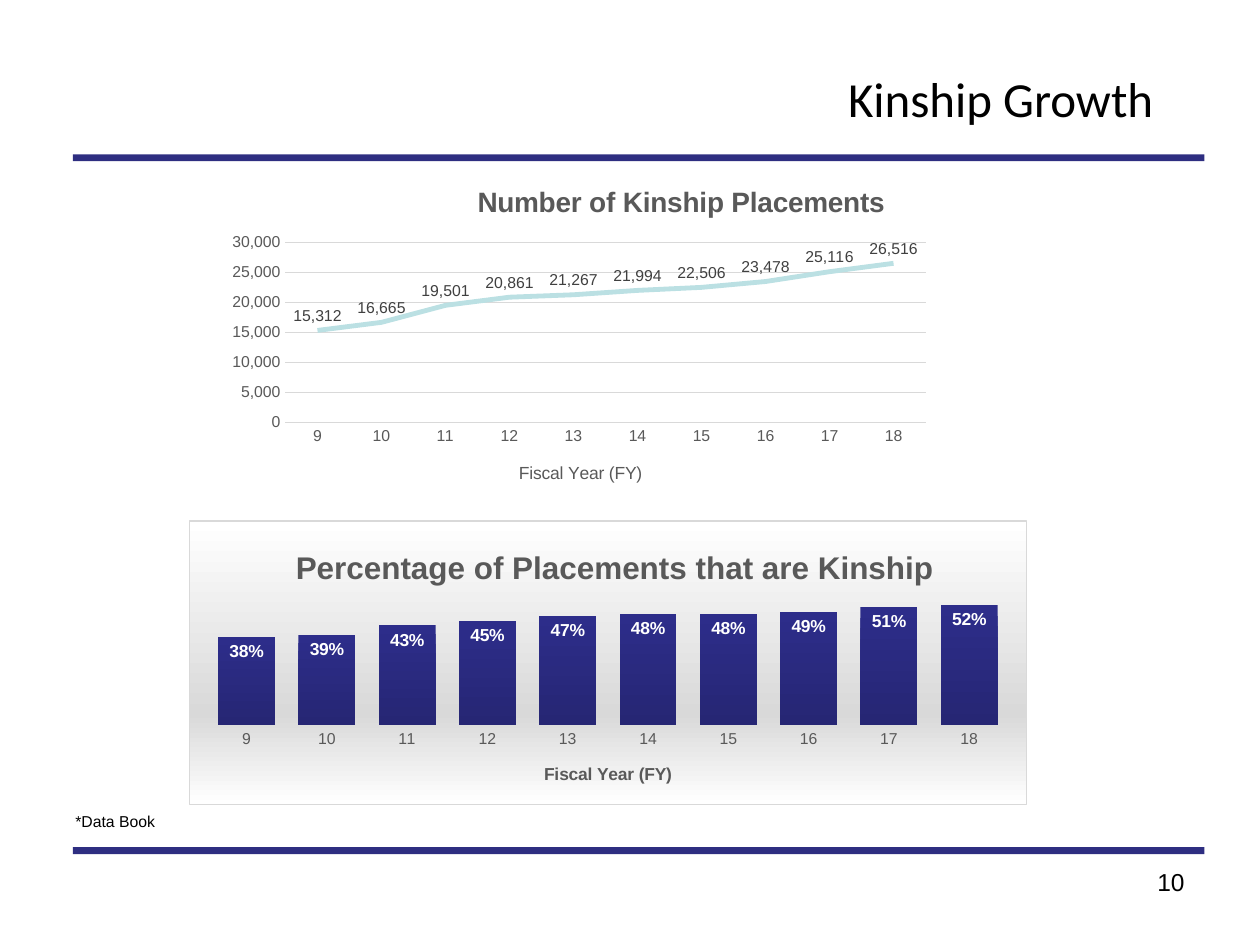
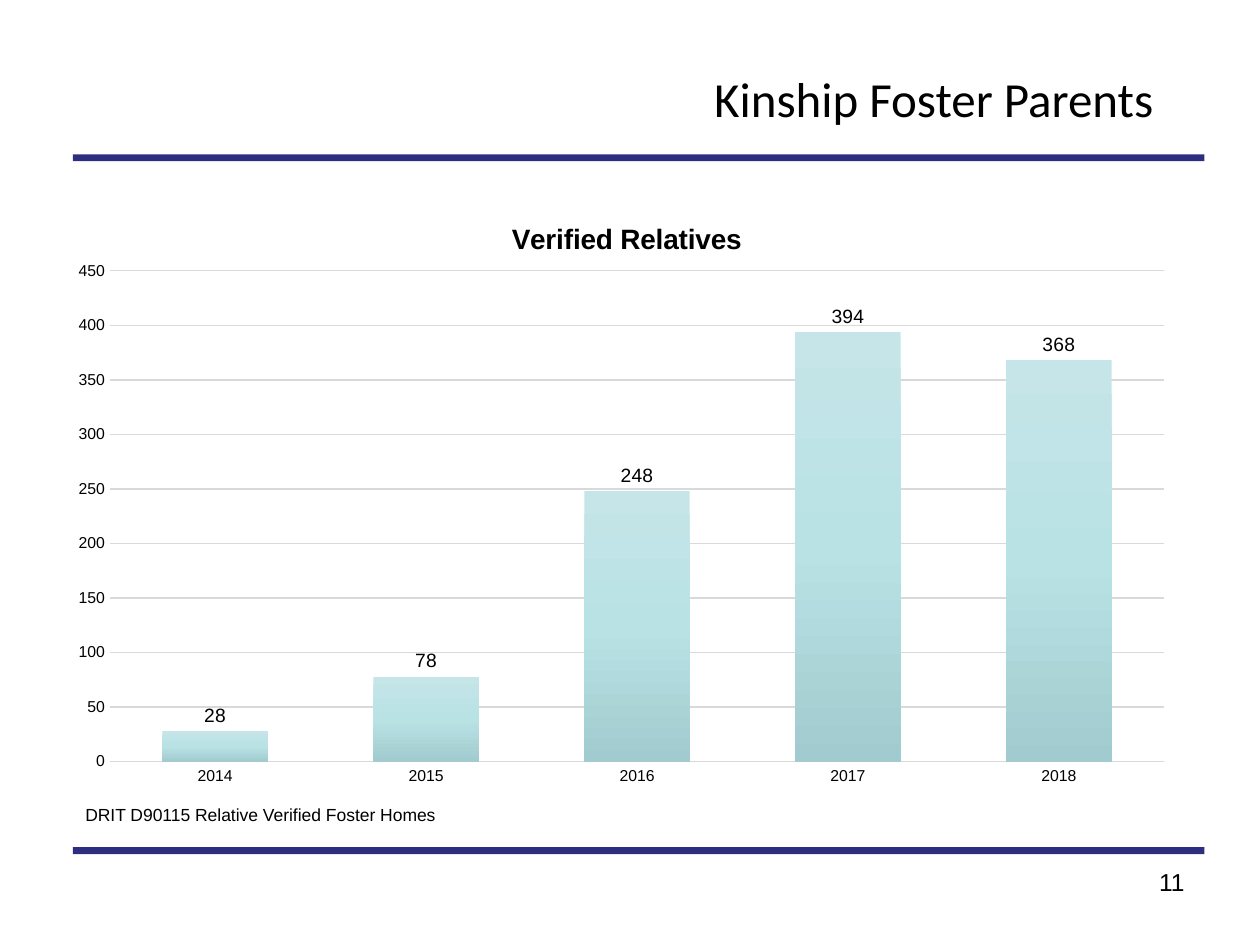
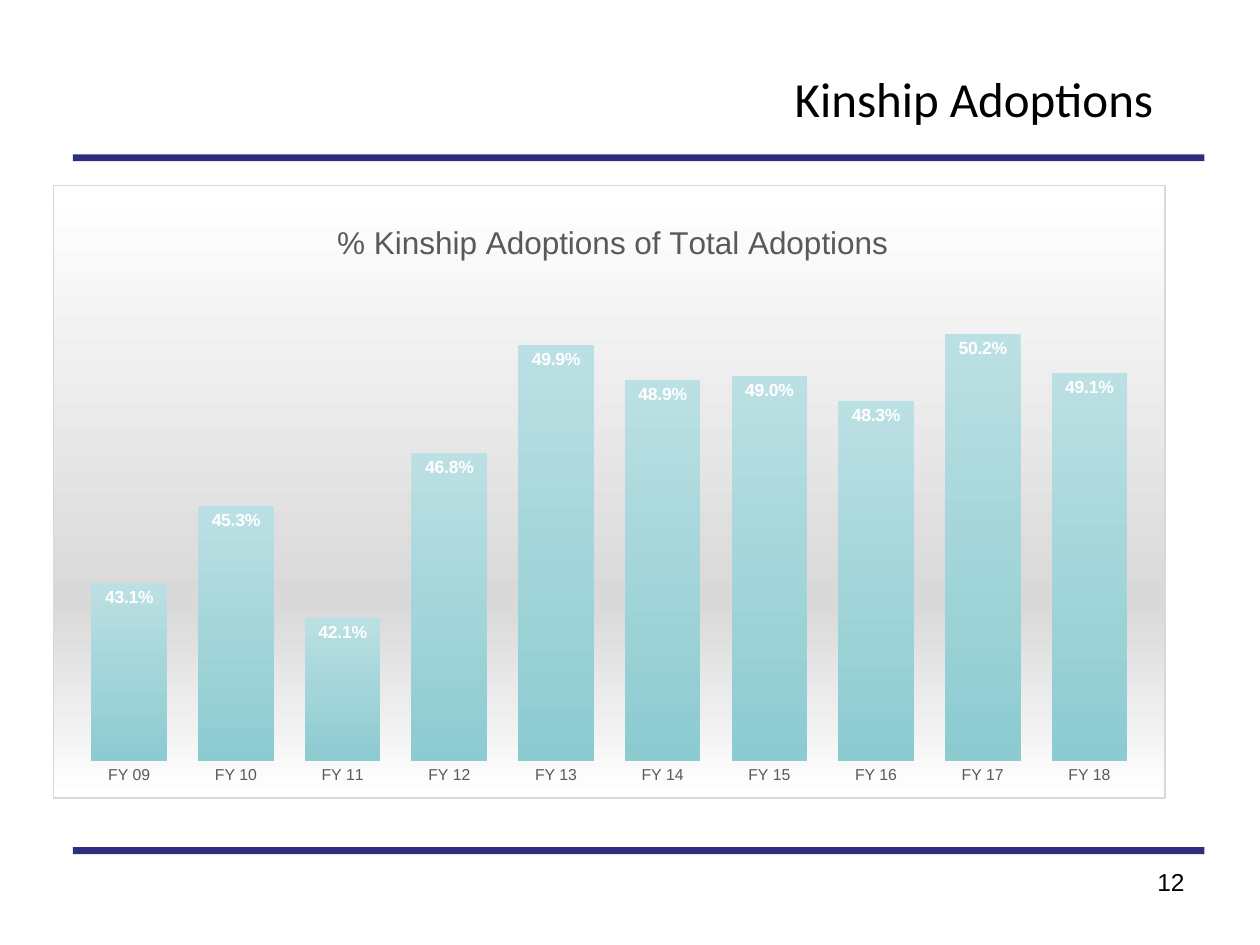
from dataclasses import dataclass

from pptx import Presentation
from pptx.chart.data import CategoryChartData
from pptx.dml.color import RGBColor
from pptx.enum.chart import XL_CHART_TYPE as ChartType
from pptx.enum.chart import XL_LABEL_POSITION as LabelPosition
from pptx.enum.chart import XL_TICK_MARK as TickMark
from pptx.enum.shapes import MSO_CONNECTOR as Connector
from pptx.enum.text import MSO_ANCHOR as Anchor
from pptx.enum.text import MSO_AUTO_SIZE as AutoSize
from pptx.enum.text import PP_ALIGN as Align
from pptx.oxml import parse_xml
from pptx.oxml.ns import nsdecls, qn
from pptx.util import Cm, Pt


@dataclass(frozen=True)
class Theme:
    title_font: str = "Calibri"
    body_font: str = "Arial"
    black: str = "000000"
    white: str = "FFFFFF"
    navy: str = "000066"
    grey: str = "595959"
    dark_grey: str = "404040"
    pale_grey: str = "D9D9D9"
    aqua: str = "BBE0E3"
    navy_bars: tuple = ((0, "2D2D8A"), (100, "262674"))
    pale_bars: tuple = ((0, "C5E5E8"), (50, "B9E2E5"), (100, "A1CBCE"))
    aqua_bars: tuple = ((0, "BBE0E3"), (100, "8CCBD0"))
    panel: tuple = ((0, "FFFFFF"), (68, "D9D9D9"), (100, "FFFFFF"))
    title_size: float = 28
    panel_title_size: float = 18
    chart_title_size: float = 16
    page_size: float = 14
    large_label_size: float = 11
    chart_size: float = 10
    axis_size: float = 9
    band_width: float = 4
    band_alpha: int = 82
    series_width: float = 2.75
    hairline: float = 0.75


def gradient(stops):
    marks = "".join(
        f'<a:gs pos="{position * 1000}"><a:srgbClr val="{color}"/></a:gs>'
        for position, color in stops
    )
    return (
        f'<a:gradFill {nsdecls("a")}><a:gsLst>{marks}</a:gsLst>'
        '<a:lin ang="5400000" scaled="0"/></a:gradFill>'
    )


def place(element, index, x, y, width=None, height=None):
    for layout in element.findall(qn("c:layout")):
        element.remove(layout)
    inner = width is not None
    target = '<c:layoutTarget val="inner"/>' if inner else ""
    size = f'<c:w val="{width}"/><c:h val="{height}"/>' if inner else ""
    layout = (
        f'<c:layout {nsdecls("c")}><c:manualLayout>{target}'
        '<c:xMode val="edge"/><c:yMode val="edge"/>'
        f'<c:x val="{x}"/><c:y val="{y}"/>{size}</c:manualLayout></c:layout>'
    )
    element.insert(index, parse_xml(layout))


class Deck:
    def __init__(self, theme):
        self.theme = theme
        self.presentation = Presentation()
        self.presentation.slide_width = Cm(25.4)
        self.presentation.slide_height = Cm(19.05)
        self.slide = None

    def style(self, font, size, color, bold=False, name=None):
        font.name = name or self.theme.body_font
        font.size = Pt(size)
        font.bold = bold
        font.color.rgb = RGBColor.from_string(color)

    def outline(self, line, color, width):
        line.color.rgb = RGBColor.from_string(color)
        line.width = Pt(width)

    def start(self, title, number):
        theme = self.theme
        self.slide = self.presentation.slides.add_slide(
            self.presentation.slide_layouts[5]
        )
        shape = self.slide.shapes.title
        shape.left, shape.top = Cm(6.35), Cm(0.76)
        shape.width, shape.height = Cm(17.15), Cm(2.41)
        frame = shape.text_frame
        frame.text = title
        frame.auto_size = AutoSize.NONE
        frame.vertical_anchor = Anchor.MIDDLE
        paragraph = frame.paragraphs[0]
        paragraph.alignment = Align.RIGHT
        self.style(paragraph.font, theme.title_size, theme.black, name=theme.title_font)
        for top in (3.18, 17.15):
            self.band(top)
        self.text(str(number), (18.21, 17.35, 5.92, 1.32), theme.page_size, Align.RIGHT)

    def band(self, top):
        theme = self.theme
        band = self.slide.shapes.add_connector(
            Connector.STRAIGHT, Cm(1.47), Cm(top), Cm(24.28), Cm(top)
        )
        self.outline(band.line, theme.navy, theme.band_width)
        properties = band.element.spPr
        color = properties.find(".//" + qn("a:srgbClr"))
        color.append(
            parse_xml(f'<a:alpha {nsdecls("a")} val="{theme.band_alpha * 1000}"/>')
        )
        properties.append(parse_xml(f'<a:effectLst {nsdecls("a")}/>'))

    def text(self, words, box, size, alignment=Align.LEFT):
        frame = self.slide.shapes.add_textbox(*map(Cm, box)).text_frame
        frame.word_wrap = True
        frame.text = words
        paragraph = frame.paragraphs[0]
        paragraph.alignment = alignment
        self.style(paragraph.font, size, self.theme.black)

    def chart_title(self, title, words, corner, size, color, bold):
        title.text_frame.text = words
        self.style(title.text_frame.paragraphs[0].font, size, color, bold)
        place(title.element, 1, *corner)

    def chart(self, kind, box, categories, values, plot_area, number_format, name):
        theme = self.theme
        data = CategoryChartData(number_format=number_format)
        data.categories = categories
        data.add_series(name, values)
        chart = self.slide.shapes.add_chart(kind, *map(Cm, box), data).chart
        chart.has_legend = False
        self.style(chart.font, theme.chart_size, theme.black)
        chart.plots[0].vary_by_categories = False
        place(chart.element.find(".//" + qn("c:plotArea")), 0, *plot_area)
        return chart

    def heading(self, chart, words, corner, size, color, bold=True):
        chart.has_title = True
        self.chart_title(chart.chart_title, words, corner, size, color, bold)

    def category_axis(self, chart, color, line_color=None, title_corner=None, bold=False):
        theme = self.theme
        axis = chart.category_axis
        axis.major_tick_mark = TickMark.NONE
        axis.has_major_gridlines = False
        self.style(axis.tick_labels.font, theme.axis_size, color)
        if line_color:
            self.outline(axis.format.line, line_color, theme.hairline)
        else:
            axis.format.line.fill.background()
        if title_corner:
            self.chart_title(
                axis.axis_title, "Fiscal Year (FY)", title_corner,
                theme.chart_size, color, bold,
            )

    def value_axis(self, chart, low, high, step=None, color=None):
        theme = self.theme
        axis = chart.value_axis
        axis.minimum_scale, axis.maximum_scale = low, high
        axis.has_major_gridlines = step is not None
        if step is None:
            axis.visible = False
            return
        axis.major_unit = step
        axis.major_tick_mark = TickMark.NONE
        axis.format.line.fill.background()
        self.outline(axis.major_gridlines.format.line, theme.pale_grey, theme.hairline)
        self.style(axis.tick_labels.font, theme.axis_size, color)

    def labels(self, chart, number_format, position, size, color, bold=False):
        plot = chart.plots[0]
        plot.has_data_labels = True
        labels = plot.data_labels
        labels.show_value = True
        labels.number_format = number_format
        labels.number_format_is_linked = False
        labels.position = position
        self.style(labels.font, size, color, bold)

    def bars(self, chart, stops, gap, overlap=0):
        plot = chart.plots[0]
        plot.gap_width, plot.overlap = gap, overlap
        series = plot.series[0]
        series.invert_if_negative = False
        series.format.fill.gradient()
        fill = chart.element.find(f'.//{qn("c:ser")}/{qn("c:spPr")}/{qn("a:gradFill")}')
        fill.getparent().replace(fill, parse_xml(gradient(stops)))

    def panel(self, chart):
        theme = self.theme
        properties = (
            f'<c:spPr {nsdecls("c", "a")}>{gradient(theme.panel)}'
            f'<a:ln w="{Pt(theme.hairline)}"><a:solidFill>'
            f'<a:srgbClr val="{theme.pale_grey}"/></a:solidFill></a:ln></c:spPr>'
        )
        chart.element.find(qn("c:chart")).addnext(parse_xml(properties))

    def share_chart(self, box, categories, values, plot_area, number_format, scale,
                    stops, name):
        theme = self.theme
        chart = self.chart(ChartType.COLUMN_CLUSTERED, box, categories, values,
                           plot_area, number_format, name)
        self.panel(chart)
        self.value_axis(chart, *scale)
        self.bars(chart, stops, 41)
        self.labels(chart, number_format, LabelPosition.INSIDE_END,
                    theme.chart_size, theme.white, True)
        return chart


def growth_slide(deck):
    theme = deck.theme
    deck.start("Kinship Growth", 10)
    deck.text("*Data Book", (1.27, 16.23, 8.05, 0.64), theme.axis_size)
    years = [str(year) for year in range(9, 19)]

    shares = deck.share_chart(
        (3.81, 10.49, 16.89, 5.74), years,
        (0.38, 0.39, 0.43, 0.45, 0.47, 0.48, 0.48, 0.49, 0.51, 0.52),
        (0.02, 0.23, 0.96, 0.49), "0%", (0, 0.6), theme.navy_bars, "Series 1",
    )
    deck.heading(shares, "Percentage of Placements that are Kinship", (0.12, 0.07),
                 theme.panel_title_size, theme.grey)
    deck.category_axis(shares, theme.grey, title_corner=(0.42, 0.84), bold=True)

    placements = deck.chart(
        ChartType.LINE, (4.45, 3.48, 14.5, 6.71), years,
        (15312, 16665, 19501, 20861, 21267, 21994, 22506, 23478, 25116, 26516),
        (0.09, 0.21, 0.89, 0.54), "#,##0", "Series 1",
    )
    deck.heading(placements, "Number of Kinship Placements", (0.35, 0.02),
                 theme.chart_title_size, theme.grey)
    deck.category_axis(placements, theme.grey, theme.pale_grey, (0.41, 0.86))
    deck.value_axis(placements, 0, 30000, 5000, theme.grey)
    deck.labels(placements, "#,##0", LabelPosition.ABOVE, theme.axis_size, theme.dark_grey)
    series = placements.plots[0].series[0]
    series.smooth = False
    deck.outline(series.format.line, theme.aqua, theme.series_width)


def foster_parents_slide(deck):
    theme = deck.theme
    deck.start("Kinship Foster Parents", 11)
    deck.text("DRIT D90115 Relative Verified Foster Homes",
              (1.47, 16.08, 13.77, 0.69), theme.chart_size)
    homes = deck.chart(
        ChartType.COLUMN_CLUSTERED, (1.07, 3.73, 22.86, 12.37),
        [str(year) for year in range(2014, 2019)], (28, 78, 248, 394, 368),
        (0.05, 0.14, 0.93, 0.8), "General", "Series 1",
    )
    deck.heading(homes, "Verified Relatives", (0.4, 0.05),
                 theme.chart_title_size, theme.black)
    deck.category_axis(homes, theme.black, theme.pale_grey)
    deck.value_axis(homes, 0, 450, 50, theme.black)
    deck.bars(homes, theme.pale_bars, 100, -24)
    deck.labels(homes, "General", LabelPosition.OUTSIDE_END,
                theme.large_label_size, theme.black)


def adoptions_slide(deck):
    theme = deck.theme
    deck.start("Kinship Adoptions", 12)
    heading = "% Kinship Adoptions of Total Adoptions"
    adoptions = deck.share_chart(
        (1.07, 3.73, 22.43, 12.37), [f"FY {year:02}" for year in range(9, 19)],
        (0.431, 0.453, 0.421, 0.468, 0.499, 0.489, 0.49, 0.483, 0.502, 0.491),
        (0.02, 0.14, 0.96, 0.8), "0.0%", (0.38, 0.52), theme.aqua_bars, heading,
    )
    deck.heading(adoptions, heading, (0.25, 0.05),
                 theme.panel_title_size, theme.grey, False)
    deck.category_axis(adoptions, theme.grey)


def main():
    deck = Deck(Theme())
    growth_slide(deck)
    foster_parents_slide(deck)
    adoptions_slide(deck)
    deck.presentation.save("out.pptx")


if __name__ == "__main__":
    main()
